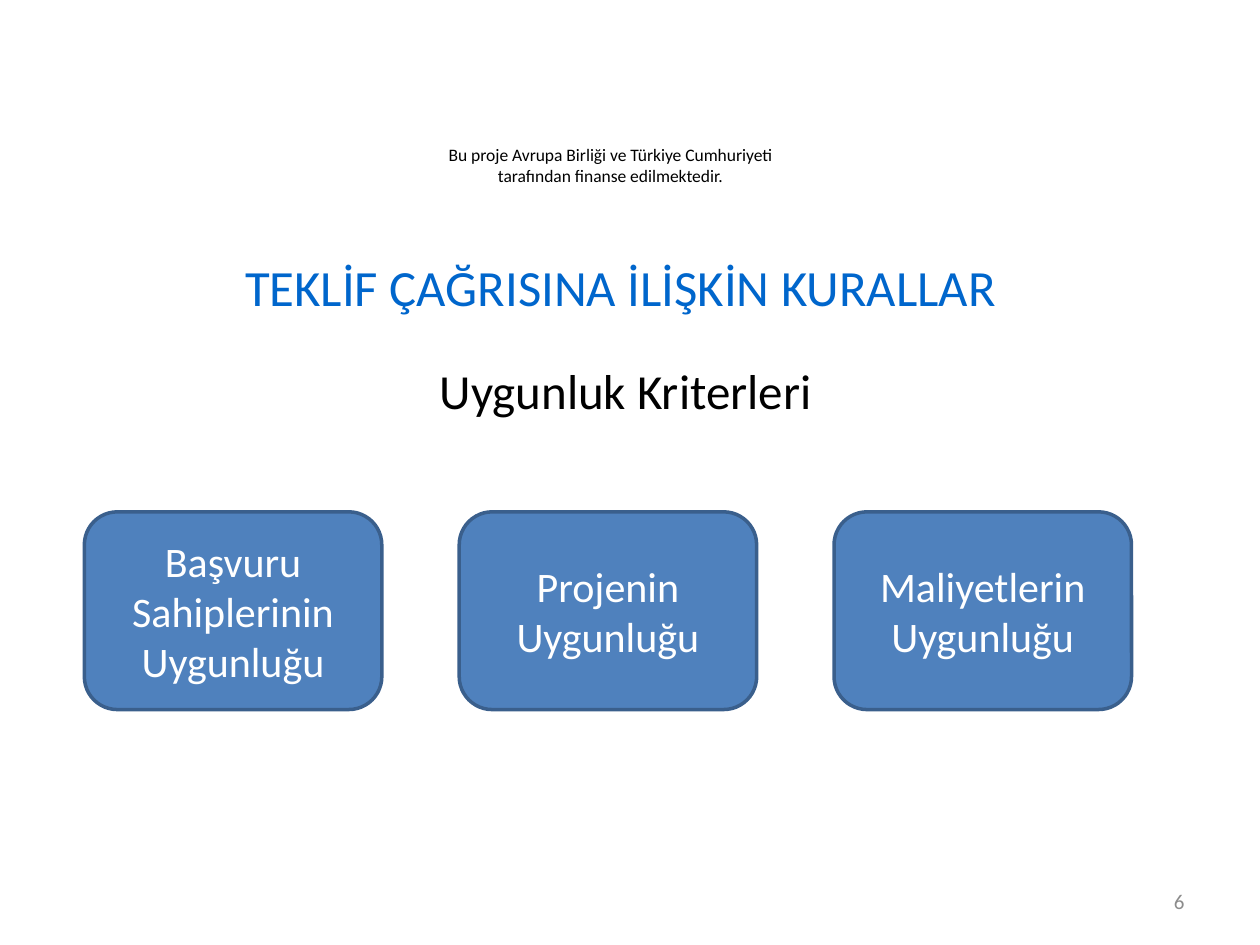
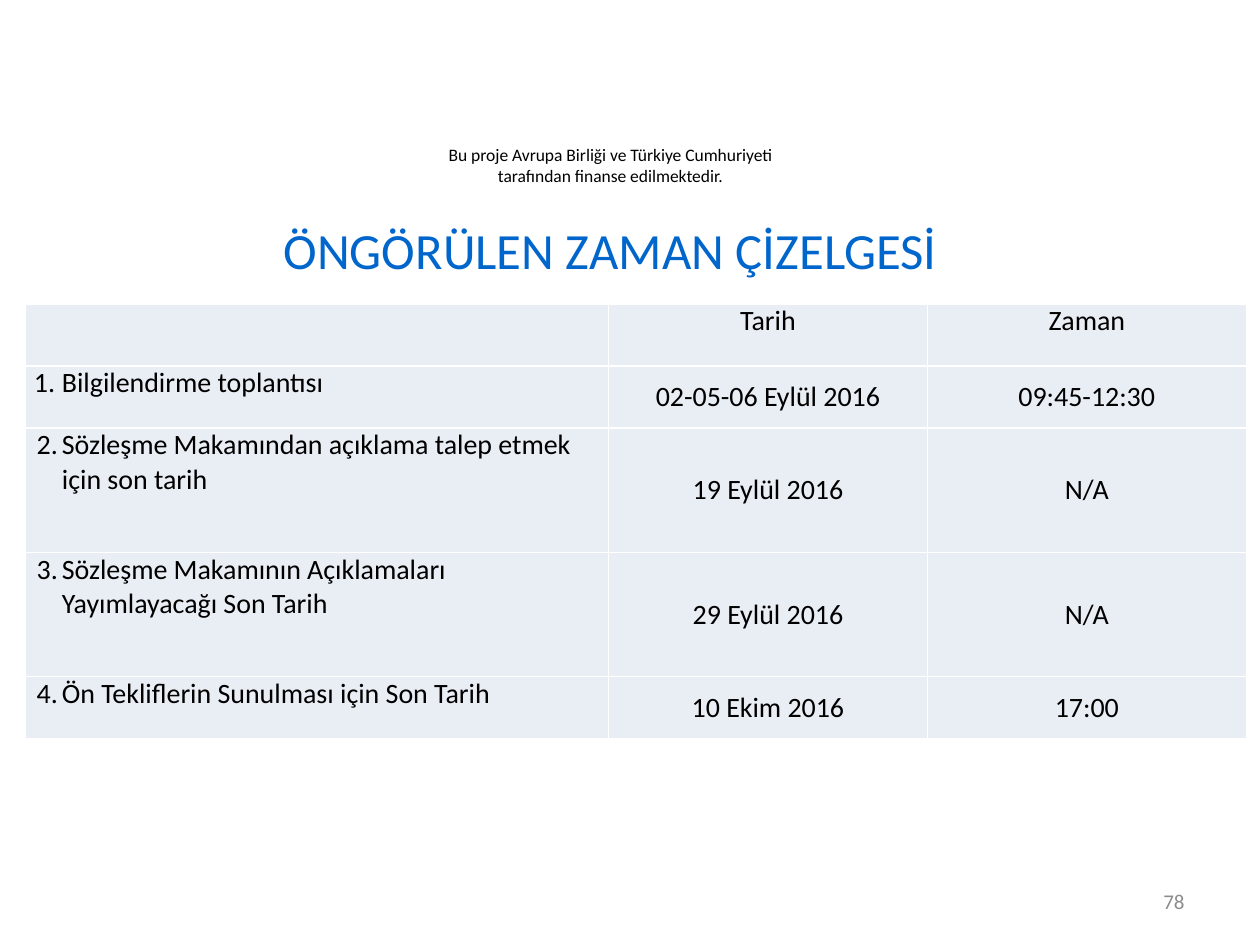
from lxml import etree
from pptx import Presentation
from pptx.dml.color import RGBColor
from pptx.enum import shapes, text
from pptx.oxml.ns import qn
from pptx.util import Pt

FONT = "Calibri"
BLACK, WHITE, GREY = "000000", "FFFFFF", "8C8C8C"
TITLE_BLUE, CARD_FILL, CARD_LINE, CELL_FILL = "0066CC", "4F81BD", "3A5F8C", "E9EDF4"
LEFT, CENTER, RIGHT = text.PP_ALIGN.LEFT, text.PP_ALIGN.CENTER, text.PP_ALIGN.RIGHT
TOP, MIDDLE = text.MSO_ANCHOR.TOP, text.MSO_ANCHOR.MIDDLE

FUNDING_NOTE = "Bu proje Avrupa Birliği ve Türkiye Cumhuriyeti tarafından finanse edilmektedir."
CRITERIA = ["Başvuru Sahiplerinin Uygunluğu", "Projenin Uygunluğu", "Maliyetlerin Uygunluğu"]
SCHEDULE = [
    ("", "Tarih", "Zaman"),
    ("1.\tBilgilendirme toplantısı", "02-05-06 Eylül 2016", "09:45-12:30"),
    ("2.\tSözleşme Makamından açıklama talep etmek için son tarih", "19 Eylül 2016", "N/A"),
    ("3.\tSözleşme Makamının Açıklamaları Yayımlayacağı Son Tarih", "29 Eylül 2016", "N/A"),
    ("4.\tÖn Tekliflerin Sunulması için Son Tarih", "10 Ekim 2016", "17:00"),
]
COLUMN_WIDTHS = [333.4, 182.2, 182.2]
ROW_HEIGHTS = [35.5, 35.5, 71, 71, 35.5]


def rgb(color):
    return RGBColor.from_string(color)


def write(p, words, size, color, align):
    p.alignment = align
    r = p.add_run()
    r.text = words
    r.font.name, r.font.size = FONT, Pt(size)
    r.font.color.rgb = rgb(color)


def add_text(s, box, words, size, color, align=CENTER, anchor=TOP):
    tf = s.shapes.add_textbox(*map(Pt, box)).text_frame
    tf.word_wrap = True
    tf.vertical_anchor = anchor
    write(tf.paragraphs[0], words, size, color, align)


def add_base_slide(prs, title, title_box, number):
    """Add a slide with the funding note, title and page number."""
    s = prs.slides.add_slide(prs.slide_layouts[6])
    add_text(s, (244, 78.5, 209.5, 22.5), FUNDING_NOTE, 10, BLACK)
    add_text(s, title_box, title, 29, TITLE_BLUE, anchor=MIDDLE)
    add_text(s, (516, 500.5, 168, 29), number, 12, GREY, RIGHT, MIDDLE)
    return s


def add_cards(s, box, labels, card_width):
    """Spread one rounded card per label evenly across the box."""
    left, top, width, height = box
    step = (width - card_width) / (len(labels) - 1)
    for i, label in enumerate(labels):
        sp = s.shapes.add_shape(shapes.MSO_SHAPE.ROUNDED_RECTANGLE,
                                Pt(left + i * step), Pt(top), Pt(card_width), Pt(height))
        sp.shadow.inherit = False
        sp.fill.solid()
        sp.fill.fore_color.rgb = rgb(CARD_FILL)
        sp.line.color.rgb = rgb(CARD_LINE)
        sp.line.width = Pt(2)
        tf = sp.text_frame
        tf.word_wrap = True
        tf.vertical_anchor = MIDDLE
        write(tf.paragraphs[0], label, 24, WHITE, CENTER)


def style_cell(cell):
    tc_pr = cell._tc.get_or_add_tcPr()
    for side in ("a:lnL", "a:lnR", "a:lnT", "a:lnB"):
        ln = etree.SubElement(tc_pr, qn(side), w=str(Pt(1)))
        fill = etree.SubElement(ln, qn("a:solidFill"))
        etree.SubElement(fill, qn("a:srgbClr"), val=WHITE)
    cell.fill.solid()
    cell.fill.fore_color.rgb = rgb(CELL_FILL)
    cell.margin_left = cell.margin_right = Pt(5)
    cell.margin_top = cell.margin_bottom = 0


def add_schedule(s, left, top):
    frame = s.shapes.add_table(len(SCHEDULE), len(COLUMN_WIDTHS), Pt(left), Pt(top),
                               Pt(sum(COLUMN_WIDTHS)), Pt(sum(ROW_HEIGHTS)))
    table = frame.table
    for column, width in zip(table.columns, COLUMN_WIDTHS):
        column.width = Pt(width)
    for row, height in zip(table.rows, ROW_HEIGHTS):
        row.height = Pt(height)
    for i, values in enumerate(SCHEDULE):
        for j, value in enumerate(values):
            cell = table.cell(i, j)
            style_cell(cell)
            if not value:
                continue
            cell.vertical_anchor = MIDDLE if i and j else TOP
            p = cell.text_frame.paragraphs[0]
            if j == 0:
                hanging = 16 if i == 1 else 14.4
                p_pr = p._p.get_or_add_pPr()
                p_pr.set("marL", str(Pt(16)))
                p_pr.set("indent", str(-Pt(hanging)))
            write(p, value, 16, BLACK, CENTER if j else LEFT)


def build_criteria_slide(prs):
    s = add_base_slide(prs, "TEKLİF ÇAĞRISINA İLİŞKİN KURALLAR", (31, 127.5, 648, 72.5), "6")
    add_text(s, (31, 202.5, 653, 249), "Uygunluk Kriterleri", 28, BLACK)
    add_cards(s, (48.2, 292.5, 598.4, 113), CRITERIA, 170)


def build_schedule_slide(prs):
    s = add_base_slide(prs, "ÖNGÖRÜLEN ZAMAN ÇİZELGESİ", (25, 128, 648, 29), "78")
    add_schedule(s, 14.4, 173.7)


def main():
    prs = Presentation()
    prs.slide_width, prs.slide_height = Pt(720), Pt(540)
    build_criteria_slide(prs)
    build_schedule_slide(prs)
    prs.save("out.pptx")


if __name__ == "__main__":
    main()
